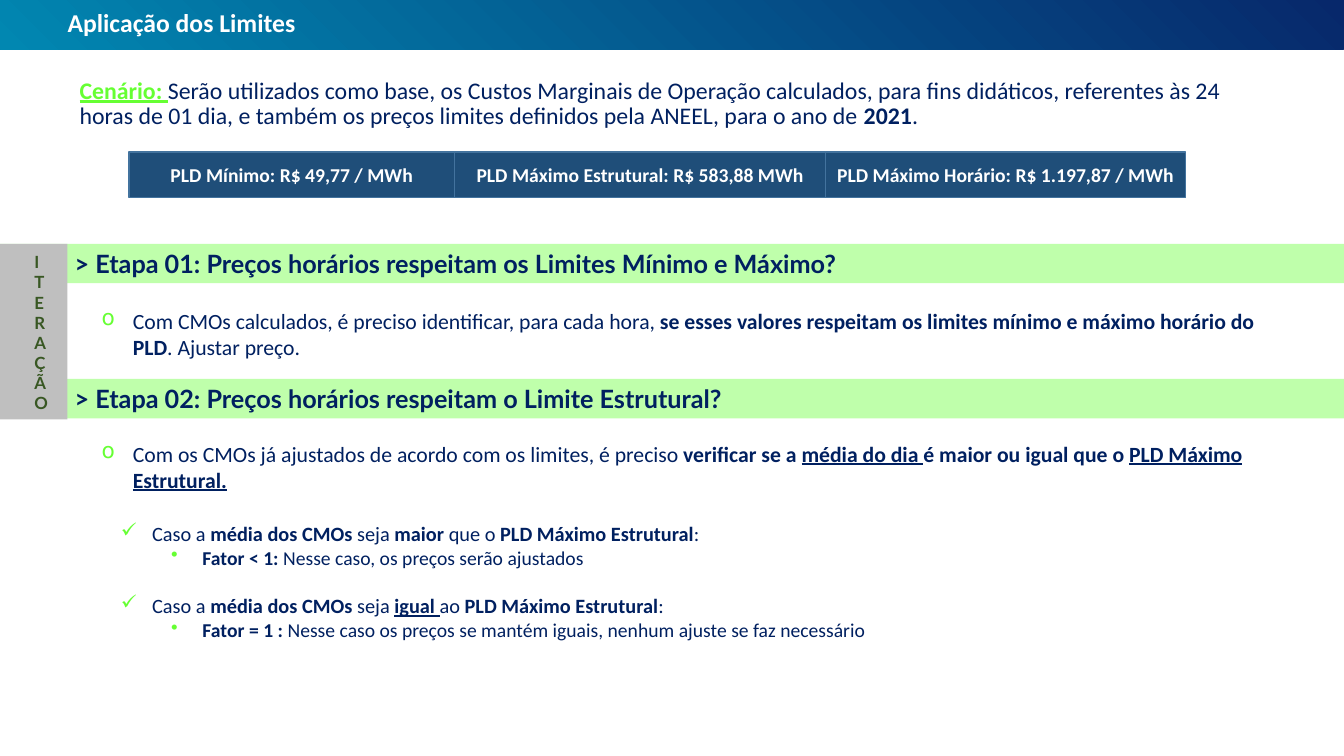
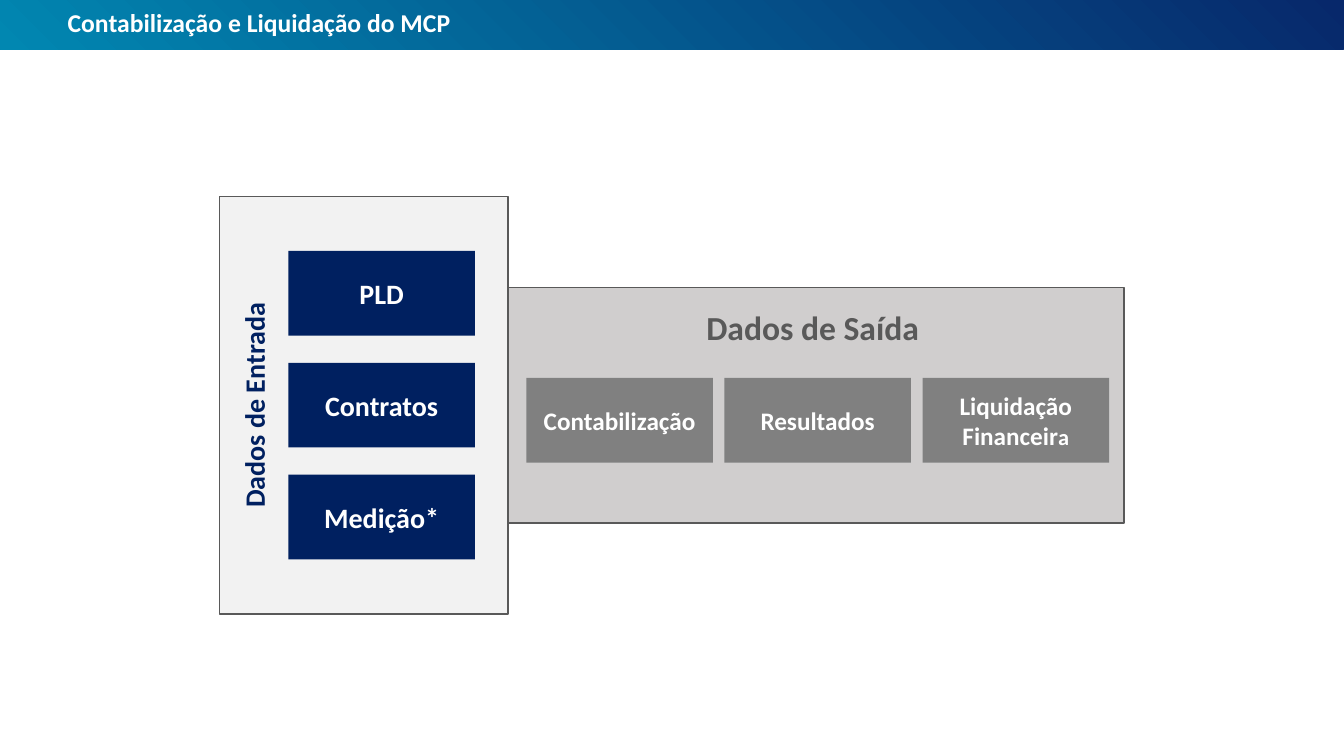
from pptx import Presentation
from pptx.dml.color import RGBColor
from pptx.enum.shapes import MSO_SHAPE
from pptx.enum.text import MSO_ANCHOR, PP_ALIGN
from pptx.oxml.ns import qn
from pptx.util import Inches, Pt
from lxml.etree import SubElement

WIDE, HIGH, BAND = 13.33, 7.5, 0.49
NAVY, WHITE, LIME, MINT = "002060", "FFFFFF", "66FF33", "BFFFAB"
DARK, SLATE = "595959", "808080"
BODY, HEAD = "Calibri", "Lato"

# Runs are (text, marks) or (text, marks, size); marks: b bold, u underlined.
SCENE = [
    ("Cenário: ", "bu"),
    ("Serão utilizados como base, os Custos Marginais de Operação calculados, "
     "para fins didáticos, referentes às 24 horas de 01 dia, e também os "
     "preços limites definidos pela ANEEL, para o ano de ", ""),
    ("2021", "b"), (".", "")]
LIMITS = [
    ("PLD Mínimo: R$ 49,77 / MWh", 3.23),
    ("PLD Máximo Estrutural: R$ 583,88 MWh", 3.68),
    ("PLD Máximo Horário: R$ 1.197,87 / MWh", 3.57)]
STAGES = [
    "> Etapa 01: Preços horários respeitam os Limites Mínimo e Máximo?",
    "> Etapa 02: Preços horários respeitam o Limite Estrutural?"]
# Each note: top, width, runs
NOTES = [
    (3, 11.93, [
        ("Com CMOs calculados, é preciso identificar, para cada hora, ", ""),
        ("se esses valores respeitam os limites mínimo e máximo horário do PLD", "b"),
        (". Ajustar preço.", "")]),
    (4.32, 11.77, [
        ("Com os CMOs já ajustados de acordo com os limites, é preciso ", ""),
        ("verificar se a ", "b"), ("média do dia ", "bu"),
        ("é maior ou igual que o ", "b"), ("PLD Máximo Estrutural.", "bu")])]
# Each case: condition, result
CASES = [
    ([("Caso a ", ""), ("média dos CMOs ", "b"), ("seja ", ""), ("maior ", "b"),
      ("que o ", ""), ("PLD Máximo Estrutural", "b"), (":", "")],
     [("Fator < 1: ", "b"), ("Nesse caso, os preços serão ajustados", "")]),
    ([("Caso a ", ""), ("média dos CMOs", "b"), (" seja ", ""), ("igual ", "bu"),
      ("ao ", ""), ("PLD Máximo Estrutural", "b"), (":", "")],
     [("Fator = 1 : ", "b"),
      ("Nesse caso os preços se mantém iguais, nenhum ajuste se faz necessário", "")])]
INPUTS = ["PLD", "Contratos", "Medição*"]
OUTPUTS = [
    [[("Contabilização", "b")]],
    [[("Resultados", "b")]],
    [[("Liquidação", "b")], [("Financeir", "b"), ("a", "b", 16)]]]


def color(code):
    return RGBColor.from_string(code)


def style(para, size, ink=NAVY, face=BODY, bold=None, align=PP_ALIGN.LEFT):
    para.alignment = align
    font = para.font
    font.name, font.size, font.bold = face, Pt(size), bold
    font.color.rgb = color(ink)


def fill_runs(para, runs):
    for text, marks, *size in runs:
        run = para.add_run()
        run.text = text
        run.font.bold = "b" in marks
        run.font.underline = "u" in marks
        if size:
            run.font.size = Pt(size[0])


def bullet(para, char, level, indent):
    para.level = level
    props = para._p.get_or_add_pPr()
    props.set("marL", str(Inches(indent)))
    props.set("indent", str(Inches(-0.31)))
    tint = SubElement(props, qn("a:buClr"))
    SubElement(tint, qn("a:srgbClr")).set("val", LIME)
    SubElement(props, qn("a:buChar")).set("char", char)


def add_para(frame):
    """Return the empty first paragraph, or a new one."""
    first = frame.paragraphs[0]
    return frame.add_paragraph() if first.runs else first


def add_text(slide, left, top, width, height):
    box = slide.shapes.add_textbox(
        Inches(left), Inches(top), Inches(width), Inches(height))
    box.text_frame.word_wrap = True
    return box


def add_box(slide, left, top, width, height, fill, line=None):
    box = slide.shapes.add_shape(
        MSO_SHAPE.RECTANGLE, Inches(left), Inches(top), Inches(width), Inches(height))
    box.shadow.inherit = False
    box.fill.solid()
    box.fill.fore_color.rgb = color(fill)
    if line:
        box.line.color.rgb = color(line)
        box.line.width = Pt(1)
    else:
        box.line.fill.background()
    frame = box.text_frame
    frame.word_wrap = True
    frame.vertical_anchor = MSO_ANCHOR.MIDDLE
    return box


def label(box, text, size, ink=WHITE, face=BODY, align=PP_ALIGN.CENTER):
    para = box.text_frame.paragraphs[0]
    para.text = text
    style(para, size, ink, face, True, align)


def add_band(slide):
    """Put the gradient band on the slide's layout, behind the title."""
    band = add_box(slide, 0, 0, WIDE, BAND, NAVY)
    band.fill.gradient()
    band.fill.gradient_angle = 225
    for stop, (spot, code) in zip(band.fill.gradient_stops,
                                  [(0, "07286B"), (1, "0187B1")]):
        stop.position = spot
        stop.color.rgb = color(code)
    slide.slide_layout.shapes._spTree.insert(2, band._element)


def add_slide(deck, text):
    slide = deck.slides.add_slide(deck.slide_layouts[5])
    title = slide.shapes.title
    title.left, title.top = Inches(0.63), Inches(0)
    title.width, title.height = Inches(WIDE - 0.63), Inches(BAND)
    frame = title.text_frame
    frame.margin_left = frame.margin_right = Inches(0.04)
    frame.margin_top = frame.margin_bottom = Inches(0.04)
    frame.vertical_anchor = MSO_ANCHOR.MIDDLE
    label(title, text, 18.3, align=PP_ALIGN.LEFT)
    frame.paragraphs[0].line_spacing = 0.9
    return slide


def draw_limits(slide):
    para = add_text(slide, 0.69, 0.73, 11.92, 0.53).text_frame.paragraphs[0]
    para.line_spacing = 0.9
    fill_runs(para, SCENE)
    style(para, 17)
    para.runs[0].font.color.rgb = color(LIME)

    left = 1.28
    for text, width in LIMITS:
        label(add_box(slide, left, 1.51, width, 0.45, "1F4E79", "43739E"), text, 14)
        left += width

    for i, text in enumerate(STAGES):
        bar = add_box(slide, 0, 2.42 + 1.34 * i, WIDE, 0.39, MINT)
        bar.text_frame.margin_left = Inches(0.74)
        label(bar, text, 18, NAVY, HEAD, PP_ALIGN.LEFT)

    side = add_box(slide, 0, 2.42, 0.67, 1.74, "BFBFBF")
    frame = side.text_frame
    frame.vertical_anchor = MSO_ANCHOR.TOP
    frame.margin_left, frame.margin_right = Inches(0.34), Inches(0)
    frame.margin_top = Inches(0.08)
    label(side, "\v".join("ITERAÇÃO"), 12, "385723", HEAD, PP_ALIGN.LEFT)

    for top, width, runs in NOTES:
        para = add_text(slide, 0.91, top, width, 0.62).text_frame.paragraphs[0]
        bullet(para, "o", 1, 0.31)
        fill_runs(para, runs)
        style(para, 15.5)

    frame = add_text(slide, 0.91, 5.12, 9.25, 1.55).text_frame
    for i, (test, result) in enumerate(CASES):
        para = add_para(frame)
        if i:
            para.space_before = Pt(17.5)
        bullet(para, "✓", 2, 0.5)
        fill_runs(para, test)
        style(para, 14.5)
        para = add_para(frame)
        bullet(para, "•", 3, 1)
        fill_runs(para, result)
        style(para, 14)


def draw_flow(slide):
    add_box(slide, 2.18, 1.95, 2.86, 4.14, "F2F2F2", DARK)
    side = add_text(slide, 0.66, 3.8, 3.72, 0.44)
    side.rotation = 270
    label(side, "Dados de Entrada", 20, NAVY)
    for i, text in enumerate(INPUTS):
        label(add_box(slide, 2.86, 2.49 + 1.11 * i, 1.85, 0.84, NAVY), text, 20)

    add_box(slide, 5.04, 2.85, 6.11, 2.34, "D0CECE", DARK)
    label(add_text(slide, 6.2, 3, 3.72, 0.5), "Dados de Saída", 24, DARK)
    for i, lines in enumerate(OUTPUTS):
        box = add_box(slide, 5.22 + 1.965 * i, 3.75, 1.85, 0.84, SLATE)
        for runs in lines:
            para = add_para(box.text_frame)
            fill_runs(para, runs)
            style(para, 18, WHITE, align=PP_ALIGN.CENTER)


def main():
    deck = Presentation()
    deck.slide_width, deck.slide_height = Inches(WIDE), Inches(HIGH)
    first = add_slide(deck, "Aplicação dos Limites")
    add_band(first)
    draw_limits(first)
    draw_flow(add_slide(deck, "Contabilização e Liquidação do MCP"))
    deck.save("out.pptx")


if __name__ == "__main__":
    main()
